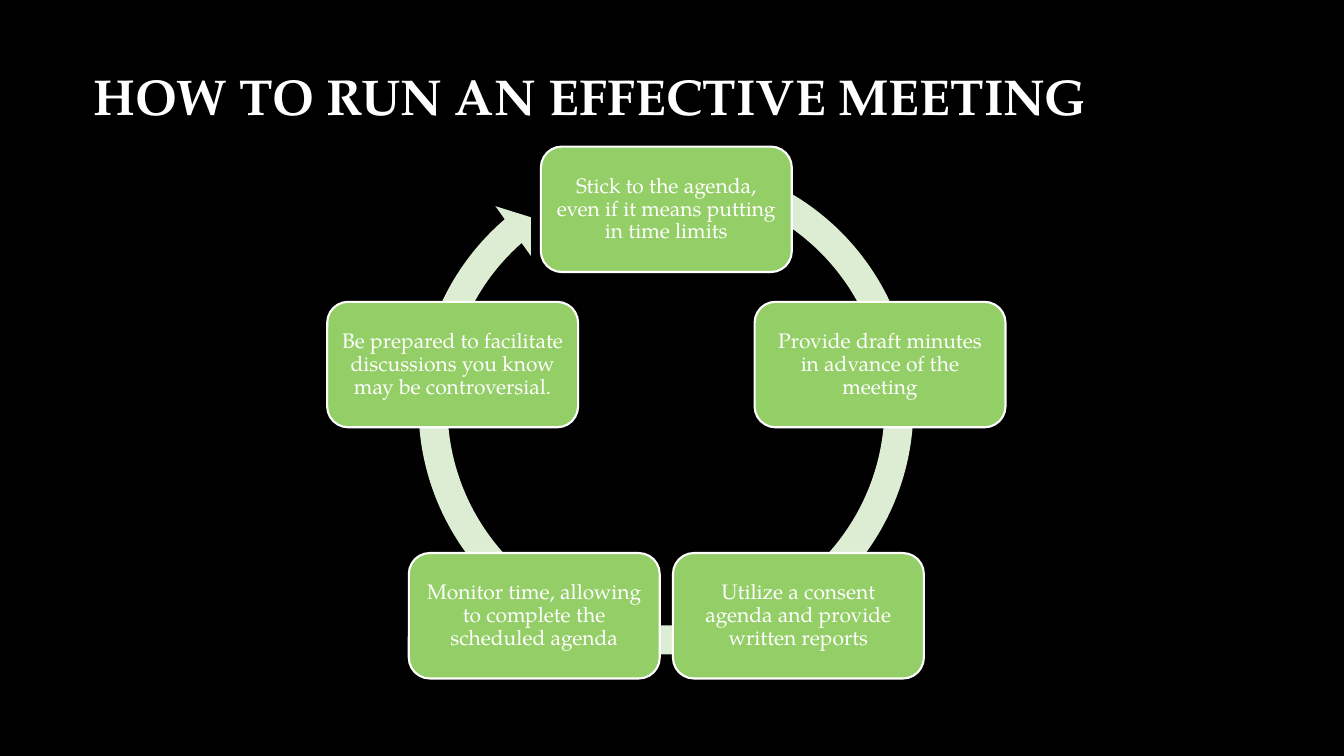
from math import cos, pi, sin

from pptx import Presentation
from pptx.dml.color import RGBColor
from pptx.enum.shapes import MSO_SHAPE as Shape
from pptx.enum.text import MSO_ANCHOR as Anchor, PP_ALIGN as Align
from pptx.util import Pt

FONT = "TeX Gyre Pagella"
COLORS = {"background": "000000", "text": "FFFFFF", "step": "94CE67", "ring": "DCEDD3"}
STEPS = [
    "Stick to the agenda, even if it means putting in time limits",
    "Provide draft minutes in advance of the meeting",
    "Utilize a consent agenda and provide written reports",
    "Monitor time, allowing to complete the scheduled agenda",
    "Be prepared to facilitate discussions you know may be controversial.",
]


def color(name):
    return RGBColor.from_string(COLORS[name])


def write(frame, text, size, bold=False):
    frame.word_wrap = True
    frame.vertical_anchor = Anchor.MIDDLE
    para = frame.paragraphs[0]
    para.alignment = Align.CENTER
    para.line_spacing = 0.9
    span = para.add_run()
    span.text = text
    span.font.name = FONT
    span.font.size = Pt(size)
    span.font.bold = bold
    span.font.color.rgb = color("text")


# Page
deck = Presentation()
deck.slide_width, deck.slide_height = Pt(960), Pt(540)
page = deck.slides.add_slide(deck.slide_layouts[5])
page.background.fill.solid()
page.background.fill.fore_color.rgb = color("background")

# Title
title = page.shapes.title
title.left, title.top, title.width, title.height = Pt(51), Pt(36), Pt(741), Pt(69)
write(title.text_frame, "HOW TO RUN AN EFFECTIVE MEETING", 36, bold=True)

# Ring arrow behind the steps
ring = page.shapes.add_shape(Shape.CIRCULAR_ARROW, Pt(287.5), Pt(102.5), Pt(376.5), Pt(376.5))
ring.shadow.inherit = False
for index, value in enumerate([0.055, 3.307, 137.416, 174.069, 0.058]):
    ring.adjustments[index] = value
ring.fill.solid()
ring.fill.fore_color.rgb = color("ring")
ring.line.fill.background()

# Steps, evenly spaced clockwise from the top
center_x, center_y, radius = 476, 310, 160.5
box_width, box_height = 179.2, 89.6
for index, text in enumerate(STEPS):
    angle = 2 * pi * index / len(STEPS)
    left = center_x + radius * sin(angle) - box_width / 2
    top = center_y - radius * cos(angle) - box_height / 2
    box = page.shapes.add_shape(
        Shape.ROUNDED_RECTANGLE, Pt(left), Pt(top), Pt(box_width), Pt(box_height))
    box.shadow.inherit = False
    box.fill.solid()
    box.fill.fore_color.rgb = color("step")
    box.line.color.rgb = color("text")
    box.line.width = Pt(1.5)
    frame = box.text_frame
    frame.margin_left = frame.margin_right = Pt(4.5)
    frame.margin_top = frame.margin_bottom = Pt(4.5)
    write(frame, text, 15)

deck.save("out.pptx")
